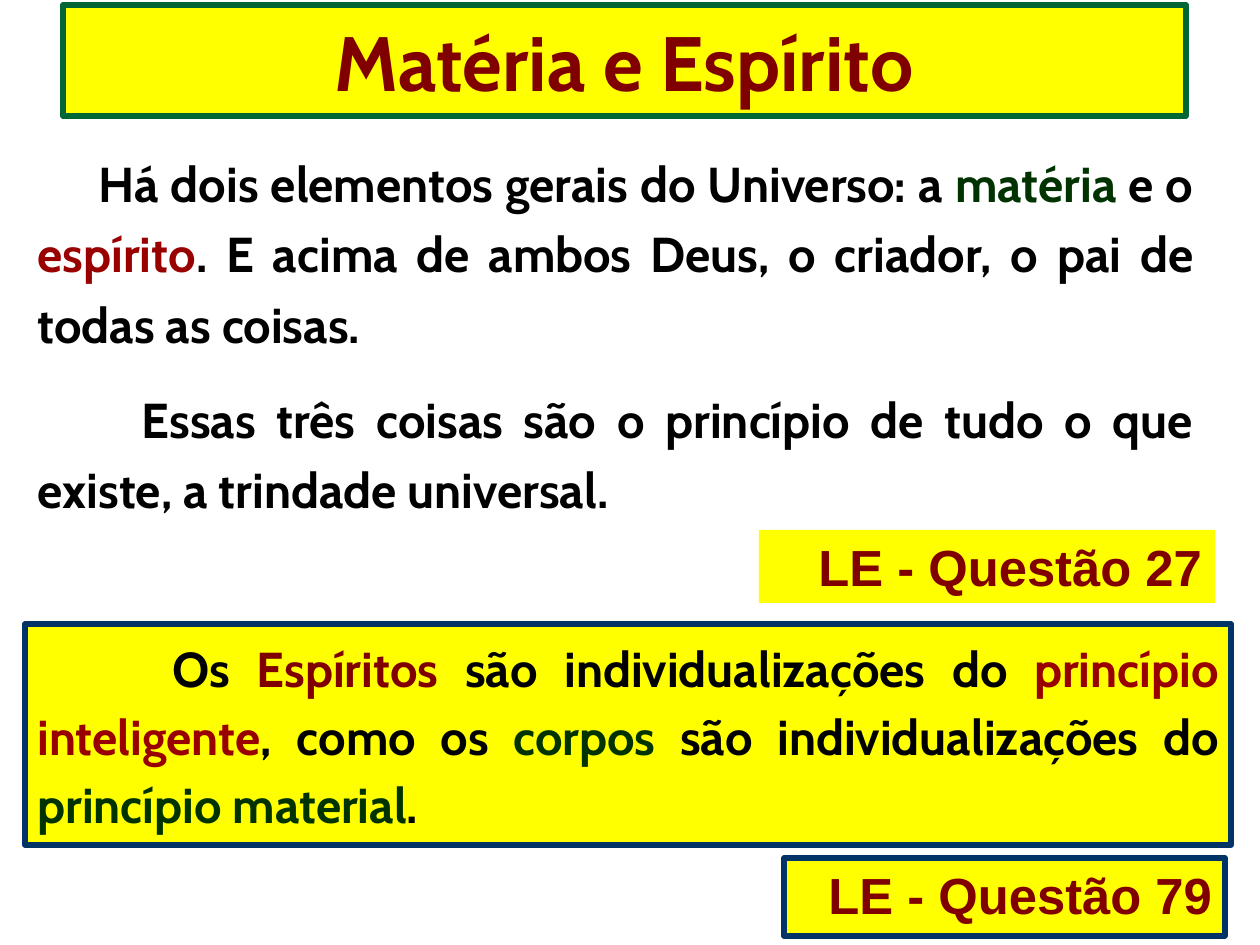
"""Build the slide on matter and spirit with its two quoted passages."""
from pptx import Presentation
from pptx.dml.color import RGBColor
from pptx.enum.shapes import MSO_SHAPE
from pptx.enum.text import MSO_ANCHOR, MSO_AUTO_SIZE, PP_ALIGN
from pptx.util import Pt
from lxml.etree import SubElement

PX = 914400 // 126
NS = "{http://schemas.openxmlformats.org/drawingml/2006/main}"
THEME = {
    "ink": "000000", "wine": "800000", "red": "990000", "moss": "003300",
    "green": "006633", "navy": "003366", "gold": "FFFF00",
    "head": ("Cabin", 44), "text": ("Cabin", 28), "tag": ("Arial", 29),
}


def tint(name):
    return RGBColor.from_string(THEME[name])


def dress(shape, place, edge=None, fill="gold"):
    shape.left, shape.top, shape.width, shape.height = [n * PX for n in place]
    frame = shape.text_frame
    frame.word_wrap = True
    frame.auto_size = MSO_AUTO_SIZE.NONE
    frame.vertical_anchor = MSO_ANCHOR.TOP
    if fill:
        shape.shadow.inherit = False
        shape.fill.solid()
        shape.fill.fore_color.rgb = tint(fill)
    if edge:
        shape.line.color.rgb = tint(edge)
        shape.line.width = Pt(3)
    else:
        shape.line.fill.background()
    return frame


def write(para, runs, style, align, gap=0, lead=1.0, indent=0):
    face, size = THEME[style]
    para.alignment = align
    para.line_spacing = lead
    para.space_before = para.space_after = Pt(gap)
    props = para._p.get_or_add_pPr()
    props.set("marL", "0")
    props.set("indent", str(indent * PX))
    SubElement(props, NS + "buNone")
    for text, color in runs:
        run = para.add_run()
        run.text = text
        run.font.name = face
        run.font.size = Pt(size)
        run.font.bold = True
        run.font.color.rgb = tint(color)


deck = Presentation()
deck.slide_width, deck.slide_height = 1260 * PX, 945 * PX
slide = deck.slides.add_slide(deck.slide_layouts[1])
shapes = slide.shapes

frame = dress(shapes.title, (63, 5, 1123, 111), "green")
frame.vertical_anchor = MSO_ANCHOR.MIDDLE
write(frame.paragraphs[0], [("Matéria e Espírito", "wine")], "head", PP_ALIGN.CENTER)

frame = dress(slide.placeholders[1], (25, 135, 1181, 396), fill=None)
first = [
    ("Há dois elementos gerais do Universo: a ", "ink"), ("matéria", "moss"),
    (" e o ", "ink"), ("espírito", "red"),
    (". E acima de ambos Deus, o criador, o pai de todas as coisas.", "ink"),
]
second = [("Essas três coisas são o princípio de tudo o que existe, a trindade universal.", "ink")]
write(frame.paragraphs[0], first, "text", PP_ALIGN.JUSTIFY, 7, 1.2, 61)
write(frame.add_paragraph(), second, "text", PP_ALIGN.JUSTIFY, 7, 1.2, 104)

quote = [
    ("Os ", "ink"), ("Espíritos", "wine"), (" são individualizações do ", "ink"),
    ("princípio inteligente", "red"), (", como os ", "ink"), ("corpos", "moss"),
    (" são individualizações do ", "ink"), ("princípio material", "moss"), (".", "ink"),
]
box = shapes.add_shape(MSO_SHAPE.RECTANGLE, 0, 0, PX, PX)
frame = dress(box, (25, 624, 1206, 221), "navy")
write(frame.paragraphs[0], quote, "text", PP_ALIGN.JUSTIFY, 5.6, 1.15, 135)

tags = [
    ("LE - Questão 27", (759, 530, 456, 73), None),
    ("LE - Questão 79", (784, 858, 441, 78), "navy"),
]
for text, place, edge in tags:
    tag = shapes.add_shape(MSO_SHAPE.RECTANGLE, 0, 0, PX, PX)
    frame = dress(tag, place, edge)
    write(frame.paragraphs[0], [(text, "wine")], "tag", PP_ALIGN.RIGHT, 5.8)

deck.save("out.pptx")
